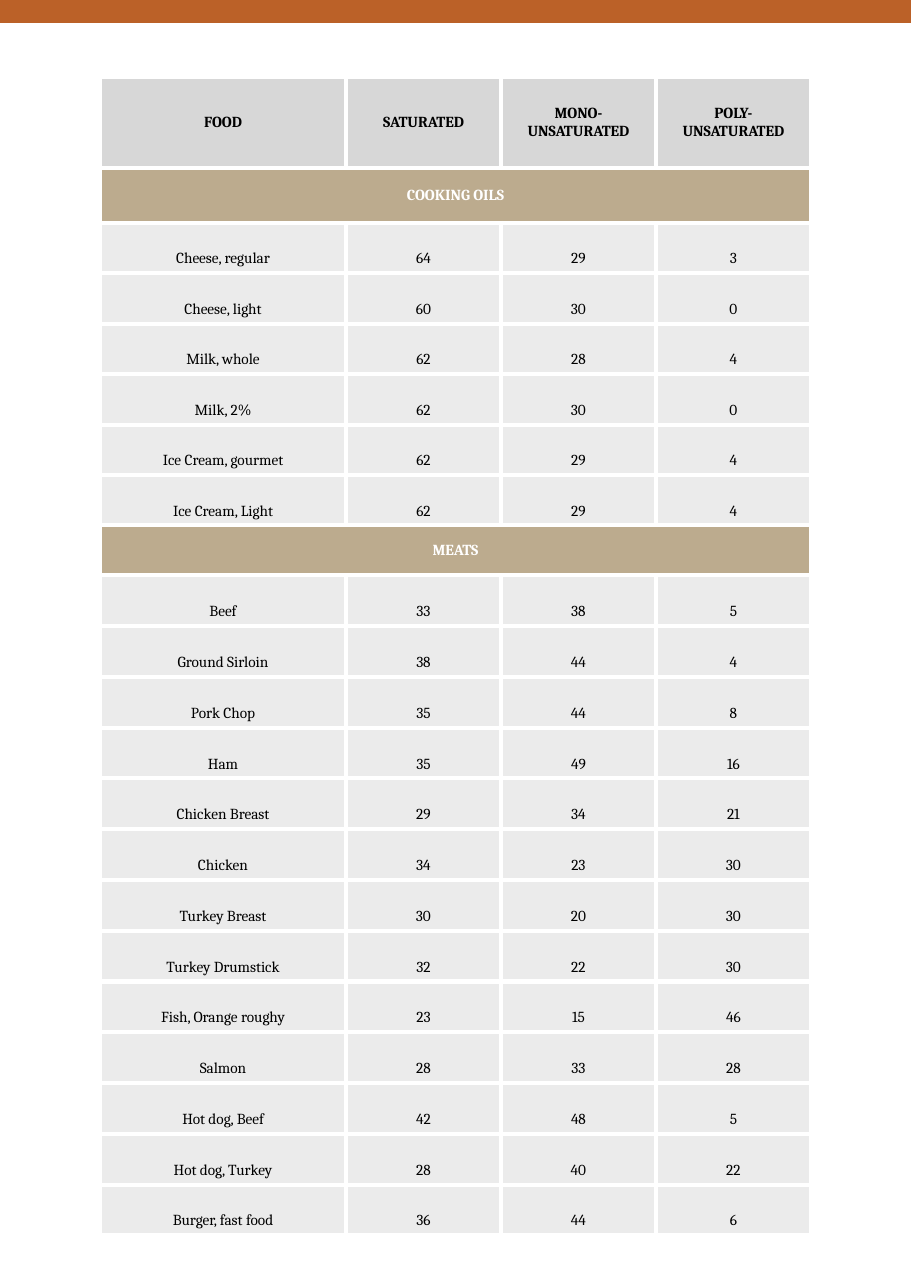
from dataclasses import dataclass

from lxml.etree import SubElement
from pptx import Presentation
from pptx.dml.color import RGBColor as Color
from pptx.enum.shapes import MSO_SHAPE as Preset
from pptx.enum.text import MSO_ANCHOR as Anchor, PP_ALIGN as Align
from pptx.oxml.ns import qn
from pptx.util import Emu, Pt

PX = 8298
PAGE_WIDTH, PAGE_HEIGHT = 911, 1288

HEADINGS = ["FOOD", "SATURATED", "MONO-\nUNSATURATED", "POLY-\nUNSATURATED"]
COOKING_OILS = [
    ("Cheese, regular", 64, 29, 3),
    ("Cheese, light", 60, 30, 0),
    ("Milk, whole", 62, 28, 4),
    ("Milk, 2%", 62, 30, 0),
    ("Ice Cream, gourmet", 62, 29, 4),
    ("Ice Cream, Light", 62, 29, 4),
]
MEATS = [
    ("Beef", 33, 38, 5),
    ("Ground Sirloin", 38, 44, 4),
    ("Pork Chop", 35, 44, 8),
    ("Ham", 35, 49, 16),
    ("Chicken Breast", 29, 34, 21),
    ("Chicken", 34, 23, 30),
    ("Turkey Breast", 30, 20, 30),
    ("Turkey Drumstick", 32, 22, 30),
    ("Fish, Orange roughy", 23, 15, 46),
    ("Salmon", 28, 33, 28),
    ("Hot dog, Beef", 42, 48, 5),
    ("Hot dog, Turkey", 28, 40, 22),
    ("Burger, fast food", 36, 44, 6),
]
SECTIONS = [("COOKING OILS", COOKING_OILS, 2.23), ("MEATS", MEATS, 2.25)]


@dataclass(frozen=True)
class Theme:
    font: str = "Cambria"
    size: int = 10
    border: int = 3
    bar: str = "BB6128"
    heading: str = "D7D7D7"
    section: str = "BCAB8E"
    body: str = "EBEBEB"
    dark: str = "000000"
    light: str = "FFFFFF"


class PageBuilder:
    def __init__(self, page, theme):
        self.page = page
        self.theme = theme

    def bar(self, left, top, width, height):
        box = self.page.shapes.add_shape(
            Preset.RECTANGLE, *(Emu(n * PX) for n in (left, top, width, height))
        )
        box.shadow.inherit = False
        box.fill.solid()
        box.fill.fore_color.rgb = Color.from_string(self.theme.bar)
        box.line.fill.background()

    def table(self, left, top, widths, heights):
        frame = self.page.shapes.add_table(
            len(heights), len(widths),
            *(Emu(n * PX) for n in (left, top, sum(widths), sum(heights))),
        )
        table = frame.table
        table.first_row = False
        table.horz_banding = False
        for column, width in zip(table.columns, widths):
            column.width = Emu(width * PX)
        for row, height in zip(table.rows, heights):
            row.height = Emu(height * PX)
        return table

    def borders(self, cell):
        properties = cell._tc.get_or_add_tcPr()
        for side in ("lnL", "lnR", "lnT", "lnB"):
            line = SubElement(properties, qn(f"a:{side}"), w=str(Pt(self.theme.border)))
            fill = SubElement(line, qn("a:solidFill"))
            SubElement(fill, qn("a:srgbClr"), val=self.theme.light)

    def cell(self, cell, text, fill, color, bold=False, spacing=None):
        self.borders(cell)
        cell.fill.solid()
        cell.fill.fore_color.rgb = Color.from_string(fill)
        cell.vertical_anchor = Anchor.TOP if spacing else Anchor.MIDDLE
        cell.text_frame.text = str(text)
        for para in cell.text_frame.paragraphs:
            para.alignment = Align.CENTER
            para.line_spacing = spacing
            para.font.name = self.theme.font
            para.font.size = Pt(self.theme.size)
            para.font.bold = bold
            para.font.color.rgb = Color.from_string(color)

    def heading_row(self, table, row, headings):
        for column, text in enumerate(headings):
            self.cell(table.cell(row, column), text, self.theme.heading,
                      self.theme.dark, bold=True)

    def section_row(self, table, row, title):
        last = len(table.columns) - 1
        table.cell(row, 0).merge(table.cell(row, last))
        self.cell(table.cell(row, 0), title, self.theme.section,
                  self.theme.light, bold=True)
        for column in range(1, last + 1):
            self.borders(table.cell(row, column))

    def food_row(self, table, row, values, spacing):
        for column, value in enumerate(values):
            self.cell(table.cell(row, column), value, self.theme.body,
                      self.theme.dark, spacing=spacing)


def main():
    deck = Presentation()
    deck.slide_width = Emu(PAGE_WIDTH * PX)
    deck.slide_height = Emu(PAGE_HEIGHT * PX)
    page = deck.slides.add_slide(deck.slide_layouts[6])
    builder = PageBuilder(page, Theme())

    builder.bar(0, 0, PAGE_WIDTH, 23)
    row_count = 1 + sum(1 + len(foods) for _, foods, _ in SECTIONS)
    heights = [91, 55] + [50] * (row_count - 2)
    table = builder.table(100, 77, [246, 155, 155, 155], heights)

    builder.heading_row(table, 0, HEADINGS)
    row = 1
    for title, foods, spacing in SECTIONS:
        builder.section_row(table, row, title)
        for offset, values in enumerate(foods, start=1):
            builder.food_row(table, row + offset, values, spacing)
        row += 1 + len(foods)

    deck.save("out.pptx")


if __name__ == "__main__":
    main()
